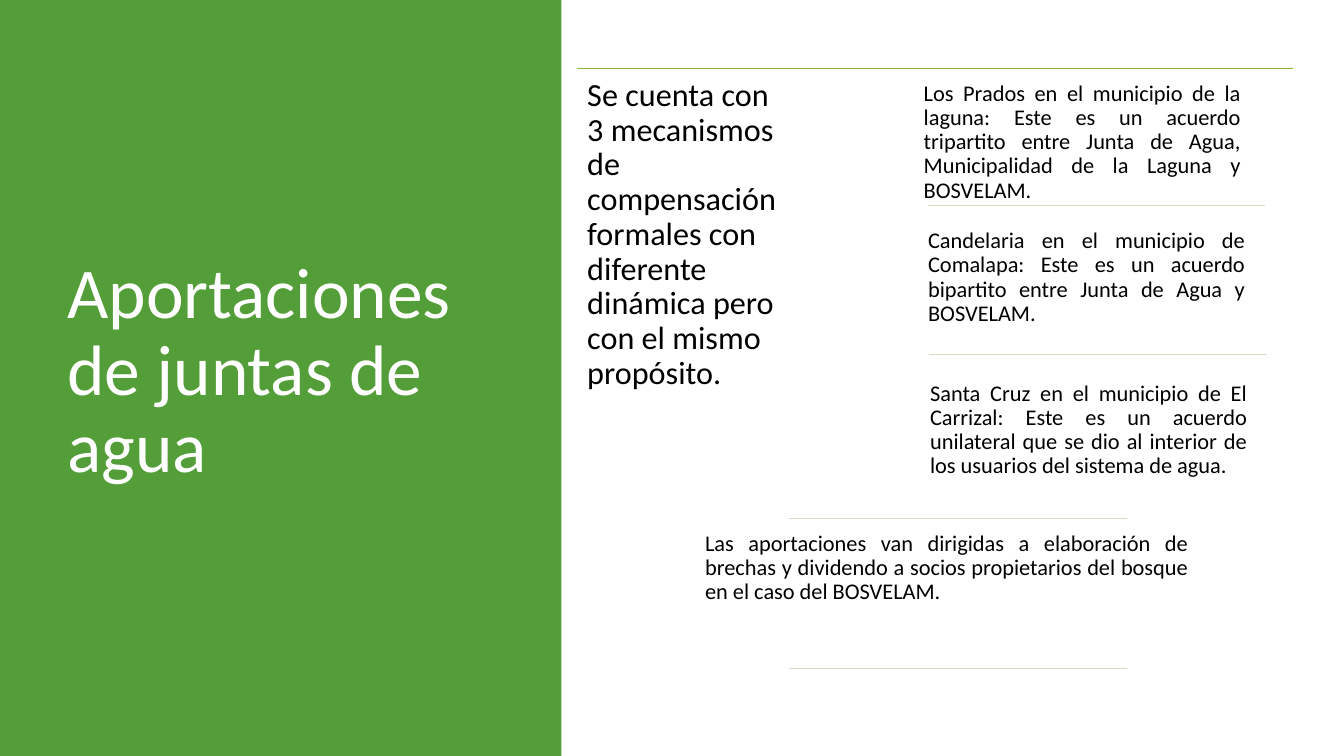
from pptx import Presentation
from pptx.dml.color import RGBColor
from pptx.enum.shapes import MSO_CONNECTOR, MSO_SHAPE
from pptx.enum.text import MSO_ANCHOR, PP_ALIGN
from pptx.oxml.ns import qn
from pptx.util import Cm, Pt
from lxml import etree

GREEN = RGBColor(0x54, 0x9E, 0x39)
LIME = RGBColor(0x8A, 0xB8, 0x33)
PALE = RGBColor(0xCF, 0xDF, 0xBF)
WHITE = RGBColor(0xFF, 0xFF, 0xFF)
BLACK = RGBColor(0, 0, 0)

deck = Presentation()
deck.slide_width, deck.slide_height = Cm(33.87), Cm(19.05)
slide = deck.slides.add_slide(deck.slide_layouts[6])


def add_text(text, left, top, width, height, size, color=BLACK, inset=0.25,
             align=PP_ALIGN.LEFT, anchor=MSO_ANCHOR.TOP):
    box = slide.shapes.add_textbox(Cm(left), Cm(top), Cm(width), Cm(height))
    frame = box.text_frame
    frame.word_wrap = True
    frame.vertical_anchor = anchor
    frame.margin_left = frame.margin_right = Cm(inset)
    frame.margin_top = frame.margin_bottom = Cm(inset)
    paragraph = frame.paragraphs[0]
    paragraph.alignment = align
    paragraph.line_spacing = 0.9
    run = paragraph.add_run()
    run.text = text
    run.font.name = "Calibri"
    run.font.size = Pt(size)
    run.font.color.rgb = color


def add_rule(left, top, length, color):
    rule = slide.shapes.add_connector(
        MSO_CONNECTOR.STRAIGHT, Cm(left), Cm(top), Cm(left + length), Cm(top))
    rule.line.color.rgb = color
    rule.line.width = Pt(1)
    etree.SubElement(rule._element.spPr, qn("a:effectLst"))


# Green panel with the title
panel = slide.shapes.add_shape(MSO_SHAPE.RECTANGLE, 0, 0, Cm(14.15), deck.slide_height)
panel.shadow.inherit = False
panel.fill.solid()
panel.fill.fore_color.rgb = GREEN
panel.line.fill.background()
add_text("Aportaciones de juntas de agua", 1.45, 1.73, 10.57, 15.29, 51,
         color=WHITE, anchor=MSO_ANCHOR.MIDDLE)

# Introduction under the top rule
add_rule(14.55, 1.73, 18.04, LIME)
add_text("Se cuenta con 3 mecanismos de compensación formales con diferente "
         "dinámica pero con el mismo propósito.", 14.55, 1.73, 5.33, 10.72, 23)

# Three agreements and the use of the contributions: left, top, width, text
details = [
    (23.11, 1.9, 8.33, "Los Prados en el municipio de la laguna: Este es un acuerdo "
     "tripartito entre Junta de Agua, Municipalidad de la Laguna y BOSVELAM."),
    (23.22, 5.61, 8.33, "Candelaria en el municipio de Comalapa: Este es un acuerdo "
     "bipartito entre Junta de Agua y BOSVELAM."),
    (23.27, 9.45, 8.33, "Santa Cruz en el municipio de El Carrizal: Este es un acuerdo "
     "unilateral que se dio al interior de los usuarios del sistema de agua."),
    (17.6, 13.23, 12.52, "Las aportaciones van dirigidas a elaboración de brechas y "
     "dividendo a socios propietarios del bosque en el caso del BOSVELAM."),
]
for left, top, width, text in details:
    add_text(text, left, top, width, 3.6, 16, inset=0.17, align=PP_ALIGN.JUSTIFY)

# Pale rules that close each detail
for left, top in [(23.39, 5.18), (23.42, 8.94), (19.89, 13.06), (19.89, 16.84)]:
    add_rule(left, top, 8.5, PALE)

deck.save("out.pptx")
